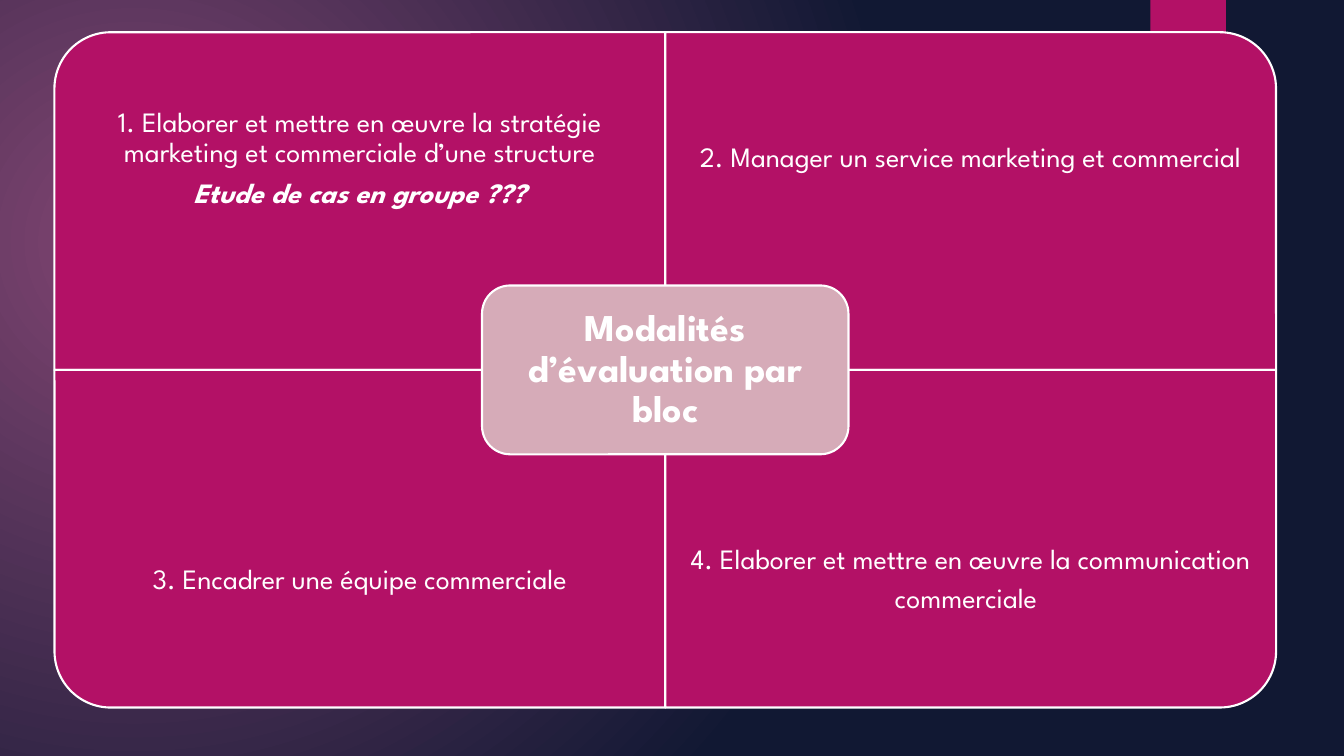
from dataclasses import dataclass

from lxml import etree
from pptx import Presentation, util as u
from pptx.dml import color
from pptx.enum import shapes, text
from pptx.oxml import ns

FONT, WHITE, PINK, ROSE = "League Spartan", "FFFFFF", "B31166", "D6ABB8"
LEFT, TOP, WIDE, HIGH = 38.9, 23, 436.3, 241.2


@dataclass
class Run:
    words: str
    size: float = 20
    bold: bool = False
    slant: bool = False


@dataclass
class Block:
    col: int
    row: int
    turn: int
    paras: list[list[Run]]


BLOCKS = [
    Block(0, 0, 270, [
        [Run("1. Elaborer et mettre en œuvre la stratégie marketing et commerciale d’une structure")],
        [Run("Etude de cas en groupe ???", bold=True, slant=True)],
    ]),
    Block(1, 0, 0, [[Run("2. Manager un service marketing et commercial")]]),
    Block(0, 1, 180, [[Run("3. Encadrer une équipe commerciale")]]),
    Block(1, 1, 90, [[
        Run("4. Elaborer et mettre en œuvre la communication commerciale"),
        Run(" ", size=27),
    ]]),
]
HUB = [[Run("Modalités d’évaluation par bloc", size=27, bold=True)]]


def rgb(code: str) -> color.RGBColor:
    return color.RGBColor.from_string(code)


def put(item, values: dict) -> None:
    for name, value in values.items():
        setattr(item, name, value)


def panel(slide, kind, x: float, y: float, w: float, h: float,
          fill: str, edge: bool = True, turn: int = 0) -> None:
    """Draw a filled shape whose turned outline fills the given area."""
    if turn % 180:
        x, y, w, h = x + (w - h) / 2, y + (h - w) / 2, h, w
    shape = slide.shapes.add_shape(kind, *map(u.Pt, (x, y, w, h)))
    shape.rotation = turn
    shape.shadow.inherit = False
    shape.fill.solid()
    shape.fill.fore_color.rgb = rgb(fill)
    if edge:
        shape.line.color.rgb = rgb(WHITE)
        shape.line.width = u.Pt(1.5)
    else:
        shape.line.fill.background()


def label(slide, x: float, y: float, w: float, h: float,
          paras: list[list[Run]], inset: float) -> None:
    """Write centred paragraphs in a text box."""
    frame = slide.shapes.add_textbox(*map(u.Pt, (x, y, w, h))).text_frame
    put(frame, {"word_wrap": True, "vertical_anchor": text.MSO_ANCHOR.MIDDLE})
    put(frame, {f"margin_{side}": u.Pt(inset)
                for side in ("left", "top", "right", "bottom")})
    for i, runs in enumerate(paras):
        para = frame.add_paragraph() if i else frame.paragraphs[0]
        put(para, {"alignment": text.PP_ALIGN.CENTER, "line_spacing": 0.9,
                   "space_after": u.Pt(0.35 * runs[0].size)})
        for part in runs:
            run = para.add_run()
            run.text = part.words
            put(run.font, {"name": FONT, "size": u.Pt(part.size),
                           "bold": part.bold, "italic": part.slant})
            run.font.color.rgb = rgb(WHITE)


def glow(slide) -> None:
    """Give the background a round gradient."""
    fill = slide.background.fill
    fill.gradient()
    for stop, (place, code) in zip(fill.gradient_stops, [(0, "814572"), (1, "111833")]):
        stop.position = place
        stop.color.rgb = rgb(code)
    grad = slide.element.find(".//" + ns.qn("a:gradFill"))
    grad.remove(grad.find(ns.qn("a:lin")))
    ring = etree.SubElement(grad, ns.qn("a:path"), {"path": "circle"})
    etree.SubElement(ring, ns.qn("a:fillToRect"),
                     {"l": "45000", "t": "65000", "r": "125000", "b": "100000"})


def main() -> None:
    deck = Presentation()
    put(deck, {"slide_width": u.Pt(960), "slide_height": u.Pt(540)})
    slide = deck.slides.add_slide(deck.slide_layouts[6])
    kinds = shapes.MSO_SHAPE

    # Background and top tab
    glow(slide)
    panel(slide, kinds.RECTANGLE, 821.7, 0, 54, 90, PINK, edge=False)

    # Four blocks; the text keeps to the outer three quarters
    for block in BLOCKS:
        x, y = LEFT + block.col * WIDE, TOP + block.row * HIGH
        panel(slide, kinds.ROUND_1_RECTANGLE, x, y, WIDE, HIGH, PINK, turn=block.turn)
        label(slide, x, y + block.row * HIGH / 4, WIDE, HIGH * 0.75, block.paras, 11.5)

    # Central title
    w, h, pad = WIDE * 0.6, HIGH / 2, 5.9
    x, y = LEFT + WIDE - w / 2, TOP + HIGH - h / 2
    panel(slide, kinds.ROUNDED_RECTANGLE, x, y, w, h, ROSE)
    label(slide, x + pad, y + pad, w - 2 * pad, h - 2 * pad, HUB, 8)

    deck.save("out.pptx")


if __name__ == "__main__":
    main()
